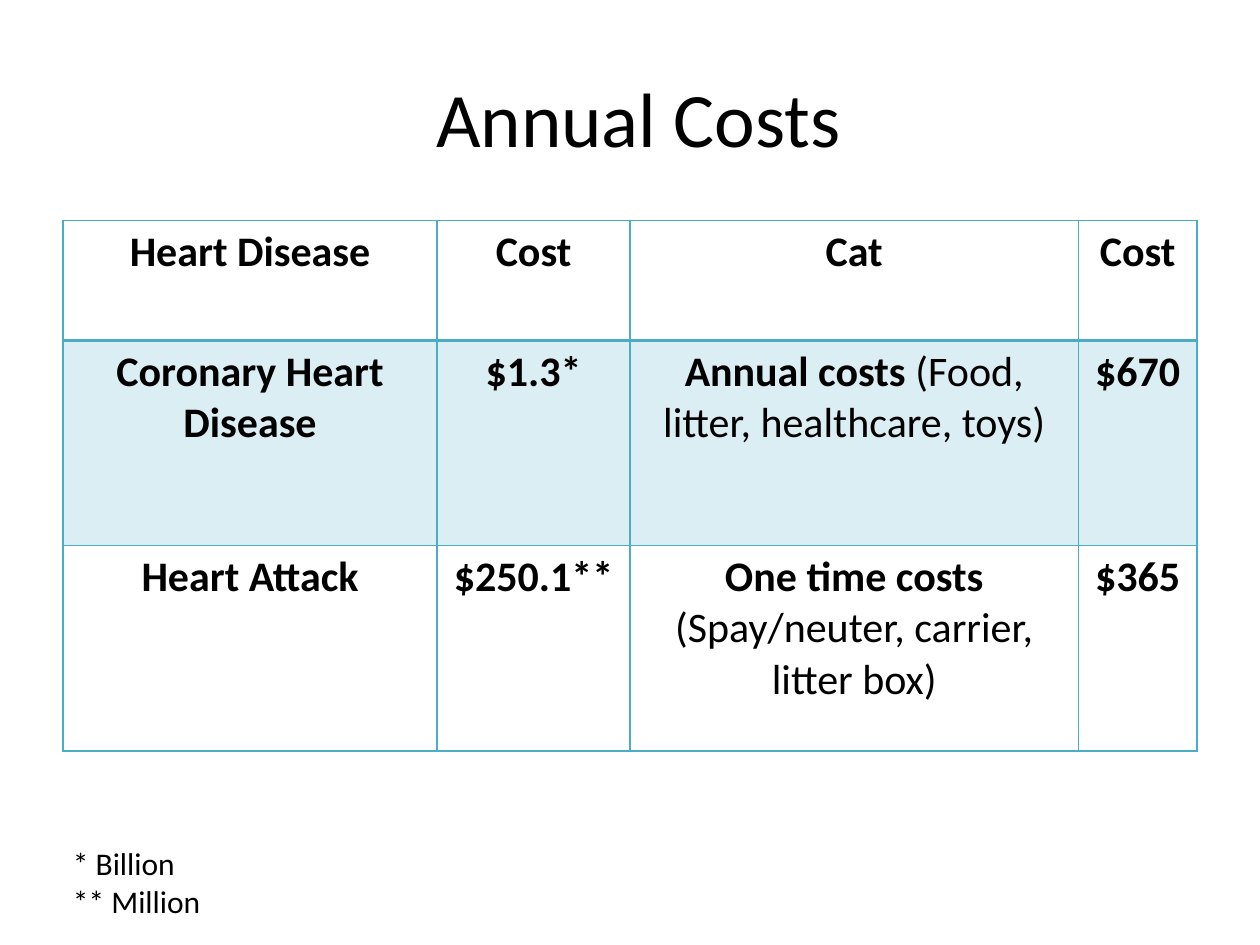
"""Build the annual costs slide with its table and footnotes."""
from lxml import etree
from pptx import Presentation, util as u
from pptx.dml.color import RGBColor
from pptx.enum import text
from pptx.oxml import ns

THEME = {
    "font": "Calibri", "text": "000000", "accent": "4BACC6", "band_alpha": 20,
    "title": 44, "table": 24, "note": 18, "line": 1, "header_line": 2,
}
TITLE = " Annual Costs"
ROWS = [
    [["Heart Disease"], ["Cost"], ["Cat"], ["Cost"]],
    [["Coronary Heart Disease"], ["$1.3*"],
     ["Annual costs ", "(Food, litter, healthcare, toys)"], ["$670"]],
    [["Heart Attack"], ["$250.1**"],
     ["One time costs ", "(Spay/neuter, carrier, litter box)"], ["$365"]],
]
COLUMN_WIDTHS = [2.97, 1.53, 3.56, 0.94]
ROW_HEIGHTS = [0.95, 1.63, 1.63]
BANDED_ROW = 1
NOTES = ["* Billion", "** Million"]


def add_run(paragraph, words, size, bold=False):
    run = paragraph.add_run()
    run.text = words
    run.font.name = THEME["font"]
    run.font.size = u.Pt(size)
    run.font.bold = bold
    run.font.color.rgb = RGBColor.from_string(THEME["text"])


def set_borders(cell, widths):
    properties = cell._tc.get_or_add_tcPr()
    for position, (side, width) in enumerate(widths.items()):
        line = etree.Element(ns.qn(f"a:ln{side}"), w=str(u.Pt(width)))
        fill = etree.SubElement(line, ns.qn("a:solidFill"))
        etree.SubElement(fill, ns.qn("a:srgbClr"), val=THEME["accent"])
        properties.insert(position, line)


def set_fill(cell, banded):
    if not banded:
        cell.fill.background()
        return
    cell.fill.solid()
    cell.fill.fore_color.rgb = RGBColor.from_string(THEME["accent"])
    color = cell._tc.tcPr.find(f"{ns.qn('a:solidFill')}/{ns.qn('a:srgbClr')}")
    etree.SubElement(color, ns.qn("a:alpha"), val=str(THEME["band_alpha"] * 1000))


def add_title(slide):
    title = slide.shapes.title
    title.left, title.top = u.Inches(0.5), u.Inches(0.3)
    title.width, title.height = u.Inches(9), u.Inches(1.25)
    title.text_frame.vertical_anchor = text.MSO_ANCHOR.MIDDLE
    paragraph = title.text_frame.paragraphs[0]
    paragraph.alignment = text.PP_ALIGN.CENTER
    add_run(paragraph, TITLE, THEME["title"])


def add_cost_table(slide):
    table = slide.shapes.add_table(
        len(ROWS), len(COLUMN_WIDTHS), u.Inches(0.5), u.Inches(1.75),
        u.Inches(sum(COLUMN_WIDTHS)), u.Inches(sum(ROW_HEIGHTS))).table
    table.first_row = table.horz_banding = False
    for column, width in zip(table.columns, COLUMN_WIDTHS):
        column.width = u.Inches(width)
    for row, height in zip(table.rows, ROW_HEIGHTS):
        row.height = u.Inches(height)
    for row_index, row in enumerate(ROWS):
        borders = dict.fromkeys("LRTB", THEME["line"])
        if row_index == 0:
            borders["B"] = THEME["header_line"]
        elif row_index == 1:
            borders["T"] = THEME["header_line"]
        for column_index, runs in enumerate(row):
            cell = table.cell(row_index, column_index)
            set_fill(cell, row_index == BANDED_ROW)
            set_borders(cell, borders)
            paragraph = cell.text_frame.paragraphs[0]
            paragraph.alignment = text.PP_ALIGN.CENTER
            for run_index, words in enumerate(runs):
                add_run(paragraph, words, THEME["table"], bold=run_index == 0)


def add_notes(slide):
    box = slide.shapes.add_textbox(
        u.Inches(0.48), u.Inches(6.65), u.Inches(5.62), u.Inches(0.71))
    frame = box.text_frame
    frame.word_wrap = True
    frame.auto_size = text.MSO_AUTO_SIZE.SHAPE_TO_FIT_TEXT
    for index, note in enumerate(NOTES):
        paragraph = frame.add_paragraph() if index else frame.paragraphs[0]
        add_run(paragraph, note, THEME["note"])


def main():
    presentation = Presentation()
    presentation.slide_width, presentation.slide_height = u.Inches(10), u.Inches(7.5)
    slide = presentation.slides.add_slide(presentation.slide_layouts[5])
    add_title(slide)
    add_cost_table(slide)
    add_notes(slide)
    presentation.save("out.pptx")


if __name__ == "__main__":
    main()
